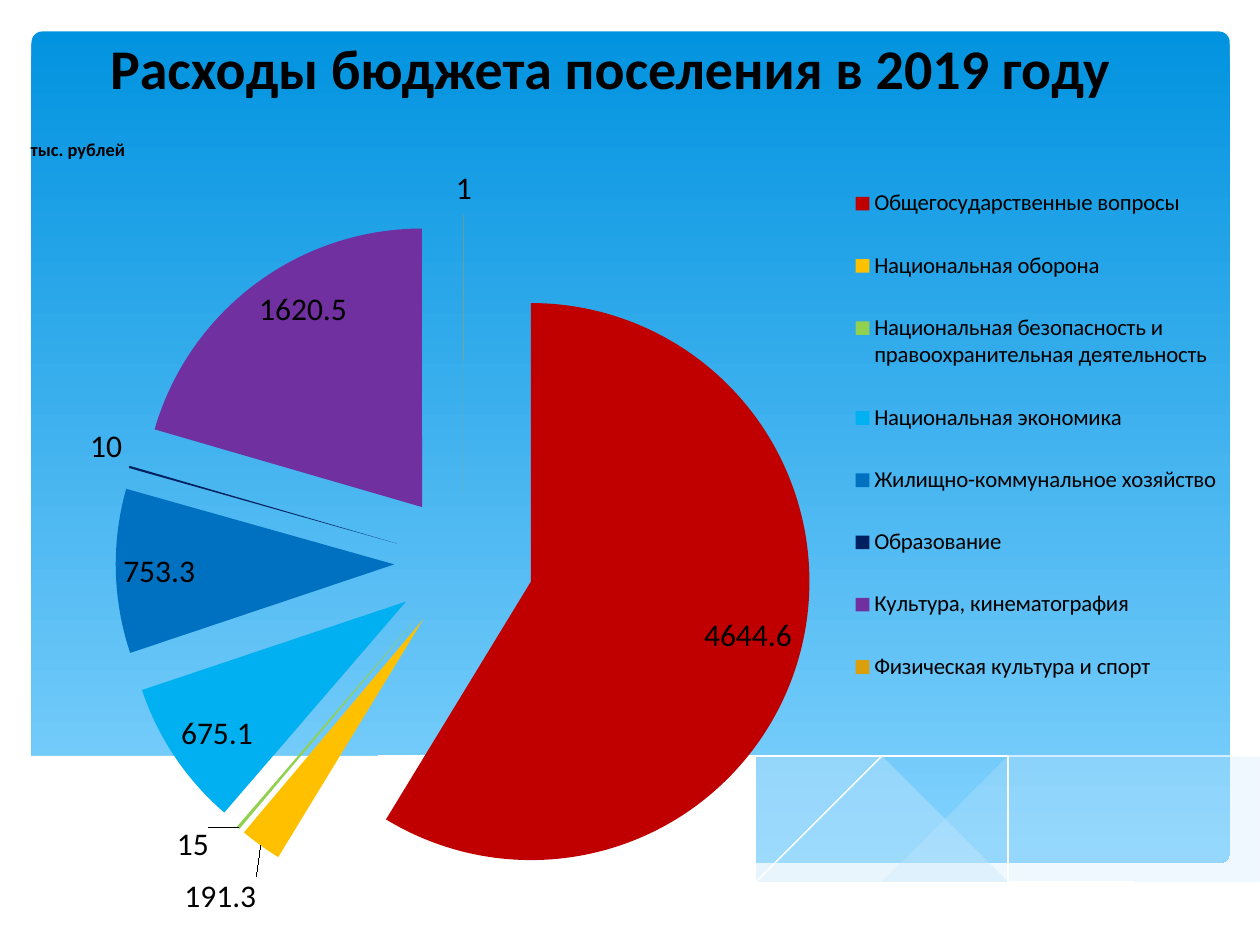
from lxml.etree import SubElement
from pptx import Presentation
from pptx.chart.data import CategoryChartData
from pptx.dml.color import RGBColor
from pptx.enum.chart import XL_CHART_TYPE, XL_LABEL_POSITION, XL_LEGEND_POSITION
from pptx.enum.shapes import MSO_SHAPE
from pptx.enum.text import MSO_ANCHOR, PP_ALIGN
from pptx.oxml.ns import qn
from pptx.util import Inches, Pt

W, H = 10, 7.5
FONT = "Calibri"
INSIDE, OUTSIDE = XL_LABEL_POSITION.INSIDE_END, XL_LABEL_POSITION.OUTSIDE_END

EXPENSES = [
    ("Общегосударственные вопросы", 4644.6, "C00000", INSIDE, None),
    ("Национальная оборона", 191.3, "FFC000", OUTSIDE, (0, 0.03)),
    ("Национальная безопасность и правоохранительная деятельность", 15, "92D050",
     OUTSIDE, (-0.02, -0.01)),
    ("Национальная экономика", 675.1, "00B0F0", INSIDE, None),
    ("Жилищно-коммунальное хозяйство", 753.3, "0070C0", INSIDE, None),
    ("Образование", 10, "002060", OUTSIDE, None),
    ("Культура, кинематография", 1620.5, "7030A0", INSIDE, None),
    ("Физическая культура и спорт", 1, "DC9F0C", OUTSIDE, None),
]

RIGHT_WAVE = [
    [(9.77, 6.01), (9.22, 6.11), (8.62, 6.25), (7.8, 6.44), (7.07, 6.59), (6.62, 6.67)],
    [(6.62, 6.67), (7.19, 6.74), (7.7, 6.79), (8.15, 6.8), (8.55, 6.78), (8.98, 6.72),
     (9.37, 6.63), (9.77, 6.49)],
]
MIDDLE_WAVE = [
    [(8.94, 6.75), (8.38, 6.67), (7.76, 6.56), (7.07, 6.42), (6.3, 6.24), (5.7, 6.1),
     (5.15, 6), (4.65, 5.93), (4.2, 5.89), (3.62, 5.87), (3.28, 5.89), (2.87, 5.93)],
    [(2.87, 5.93), (3.43, 6.01), (4.05, 6.13), (4.5, 6.24), (5.3, 6.42), (6.02, 6.57),
     (6.66, 6.68), (7.23, 6.76), (7.74, 6.79), (8.19, 6.8), (8.59, 6.79), (8.94, 6.75)],
]
FALLING_LINE = [
    [(3.1, 5.97), (3.44, 5.92), (3.88, 5.89), (4.51, 5.89), (5.11, 5.94), (5.82, 6.02),
     (6.66, 6.15), (7.61, 6.35), (8.32, 6.52), (9.08, 6.73)],
]
RISING_LINE = [
    [(6.14, 6.59), (6.73, 6.43), (7.49, 6.25), (8.07, 6.12), (8.67, 6), (9.25, 5.92),
     (9.76, 5.87)],
]
FRONT_WAVE = [
    [(9.77, 6.48), (9.4, 6.61), (8.99, 6.71), (8.5, 6.77), (8.09, 6.79), (7.61, 6.77),
     (7.08, 6.72), (6.48, 6.64), (5.79, 6.51), (5.03, 6.35), (4.47, 6.22), (3.91, 6.09),
     (3.4, 5.99), (2.92, 5.92), (2.3, 5.87), (1.77, 5.86), (1.32, 5.88), (0.95, 5.93),
     (0.59, 6.01), (0.36, 6.09), (0.23, 6.15)],
    [(0.23, 7.31), (9.77, 7.31)],
]


def rgb(color):
    """Turn a hex string into a colour."""
    return RGBColor.from_string(color)


def set_format(target, **values):
    """Set every attribute given on the target."""
    for name, value in values.items():
        setattr(target, name, value)


def set_font(font, size, **values):
    """Format a font in the slide's typeface."""
    set_format(font, name=FONT, size=Pt(size), **values)
    font.color.rgb = rgb("000000")


def smooth(points, steps=4):
    """Return a Catmull-Rom curve through the points."""
    if len(points) < 3:
        return points
    padded = [points[0], *points, points[-1]]
    curve = [points[0]]
    for a, b, c, d in zip(padded, padded[1:], padded[2:], padded[3:]):
        for t in (n / steps for n in range(1, steps + 1)):
            curve.append(tuple(
                (2 * q + (r - p) * t + (2 * p - 5 * q + 4 * r - s) * t ** 2
                 + (3 * q - p - 3 * r + s) * t ** 3) / 2
                for p, q, r, s in zip(a, b, c, d)))
    return curve


def add_backdrop(s):
    """Add the rounded panel with its vertical gradient."""
    box = [Inches(n) for n in (0.25, 0.25, W - 0.49, 0.88 * H)]
    sp = s.shapes.add_shape(MSO_SHAPE.ROUNDED_RECTANGLE, *box)
    sp.adjustments[0] = 0.013
    sp.shadow.inherit = False
    sp.line.fill.background()
    sp.fill.gradient()
    sp.fill.gradient_angle = 270
    for stop, color in zip(sp.fill.gradient_stops, ("0293E0", "83D3FE")):
        stop.color.rgb = rgb(color)


def add_curve(s, edges, fill=None, alpha=100):
    """Add a filled wave, or a white hairline when no fill is given."""
    points = [pt for edge in edges for pt in smooth(edge)]
    builder = s.shapes.build_freeform(*points[0], scale=Inches(1))
    builder.add_line_segments(points[1:], close=bool(fill))
    sp = builder.convert_to_shape()
    sp.shadow.inherit = False
    if fill:
        sp.line.fill.background()
        sp.fill.solid()
        sp.fill.fore_color.rgb = rgb(fill)
        color = sp.fill._xPr.find(qn("a:solidFill"))[0]
        SubElement(color, qn("a:alpha"), val=str(alpha * 1000))
    else:
        sp.fill.background()
        sp.line.color.rgb = rgb("FFFFFF")
        sp.line.width = Pt(0)


def add_title(s, text):
    """Fill the title placeholder and bring it above the backdrop."""
    sp = s.shapes.title
    set_format(sp, left=Inches(0.2), top=Inches(0.21), width=Inches(9.29), height=Inches(0.64))
    tf = sp.text_frame
    set_format(tf, text=text, word_wrap=True, vertical_anchor=MSO_ANCHOR.MIDDLE)
    p = tf.paragraphs[0]
    p.alignment = PP_ALIGN.CENTER
    set_font(p.runs[0].font, 32, bold=True)
    s.shapes[-1]._element.addnext(sp._element)


def set_layout(element, index, modes=True, target=None, **shares):
    """Place a chart part by shares of the chart's size."""
    for old in element.findall(qn("c:layout")):
        element.remove(old)
    layout = SubElement(element, qn("c:layout"))
    manual = SubElement(layout, qn("c:manualLayout"))
    if target:
        SubElement(manual, qn("c:layoutTarget"), val=target)
    if modes:
        for mode in ("xMode", "yMode"):
            SubElement(manual, qn(f"c:{mode}"), val="edge")
    for name, share in shares.items():
        SubElement(manual, qn(f"c:{name}"), val=str(share))
    element.insert(index, layout)


def format_slices(plot):
    """Colour the slices, pull them apart and place their labels."""
    plot.vary_by_categories = True
    plot.has_data_labels = True
    set_format(plot.data_labels, show_value=True, show_percentage=False,
               number_format="General", number_format_is_linked=False)
    series = plot.series[0]
    ser = series._element
    explosion = SubElement(ser, qn("c:explosion"), val="25")
    ser.find(qn("c:tx")).addnext(explosion)
    for i, (_, _, color, position, shift) in enumerate(EXPENSES):
        point = series.points[i]
        point.format.fill.solid()
        point.format.fill.fore_color.rgb = rgb(color)
        point.data_label.position = position
        if shift:
            label = ser.find(qn("c:dLbls")).findall(qn("c:dLbl"))[i]
            set_layout(label, 1, modes=False, x=shift[0], y=shift[1])


def add_pie(s):
    """Add the exploded pie chart of expenses with its legend."""
    data = CategoryChartData()
    data.categories = [row[0] for row in EXPENSES]
    data.add_series("Series 1", [row[1] for row in EXPENSES])
    box = [Inches(n) for n in (0.12, 0.76, 9.76, 6.74)]
    chart = s.shapes.add_chart(XL_CHART_TYPE.PIE, *box, data).chart
    set_font(chart.font, 18)
    chart.has_title = True
    tf = chart.chart_title.text_frame
    tf.text = "тыс. рублей"
    set_font(tf.paragraphs[0].runs[0].font, 10.5, bold=True)
    chart.has_legend = True
    set_format(chart.legend, position=XL_LEGEND_POSITION.RIGHT, include_in_layout=False)
    set_font(chart.legend.font, 13)
    format_slices(chart.plots[0])
    set_layout(chart.chart_title._element, 1, x=0.01, y=0.045)
    set_layout(chart.legend._element, 1, x=0.67, y=0.07, w=0.32, h=0.66)
    plot_area = chart._chartSpace.chart.plotArea
    set_layout(plot_area, 0, target="inner", x=0.08, y=0.14, w=0.57, h=0.82)


def main():
    """Build the slide and save it."""
    prs = Presentation()
    set_format(prs, slide_width=Inches(W), slide_height=Inches(H))
    s = prs.slides.add_slide(prs.slide_layouts[5])
    add_backdrop(s)
    add_curve(s, RIGHT_WAVE, "C6E7FC", 29)
    add_curve(s, MIDDLE_WAVE, "C6E7FC", 40)
    add_curve(s, FALLING_LINE)
    add_curve(s, RISING_LINE)
    add_curve(s, FRONT_WAVE, "FFFFFF")
    add_title(s, "Расходы бюджета поселения в 2019 году")
    add_pie(s)
    prs.save("out.pptx")


if __name__ == "__main__":
    main()
